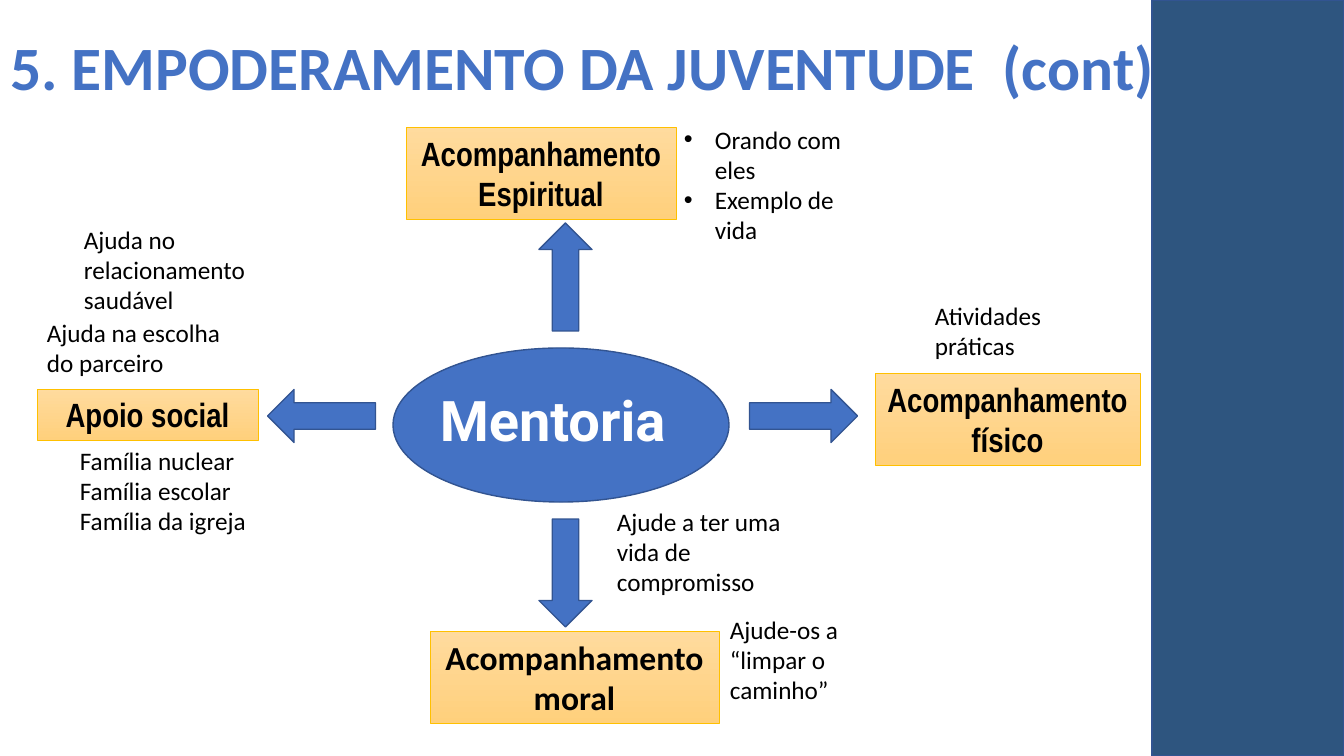
from lxml import etree
from pptx import Presentation
from pptx import util as u
from pptx.dml.color import RGBColor
from pptx.enum import shapes, text
from pptx.oxml.ns import qn

PX = 914400 / 100.8
COLORS = {
    "blue": "4472C4", "outline": "325491", "bar": "2E557F", "white": "FFFFFF",
    "black": "000000", "gold": "FFC000", "light": "FFDB9E", "deep": "FFD07C",
}
RGB = {name: RGBColor.from_string(value) for name, value in COLORS.items()}


def write(frame, lines, size, font, color="black", bold=False, align=None):
    for i, line in enumerate(lines):
        paragraph = frame.paragraphs[0] if i == 0 else frame.add_paragraph()
        paragraph.alignment = align
        run = paragraph.add_run()
        run.text = line
        run.font.size = u.Pt(size)
        run.font.name = font
        run.font.bold = bold
        run.font.color.rgb = RGB[color]


def draw(kind, box, fill="blue", line="outline", width=1):
    shape = slide.shapes.add_shape(kind, *[round(v * PX) for v in box])
    shape.shadow.inherit = False
    if fill == "gradient":
        shape.fill.gradient()
        shape.fill.gradient_angle = 270
        for stop, tone in zip(shape.fill.gradient_stops, ("light", "deep")):
            stop.color.rgb = RGB[tone]
    else:
        shape.fill.solid()
        shape.fill.fore_color.rgb = RGB[fill]
    shape.line.color.rgb = RGB[line]
    shape.line.width = u.Pt(width)
    return shape


deck = Presentation()
deck.slide_width = round(1344 * PX)
deck.slide_height = round(756 * PX)
slide = deck.slides.add_slide(deck.slide_layouts[5])

title = slide.shapes.title
title.left, title.top, title.width, title.height = [round(v * PX) for v in (0, 26, 1177, 90)]
title.text_frame.vertical_anchor = text.MSO_ANCHOR.MIDDLE
write(title.text_frame, ["5. EMPODERAMENTO DA JUVENTUDE  (cont)"], 44, "Calibri",
      "blue", True, text.PP_ALIGN.LEFT)
title.text_frame.paragraphs[0].line_spacing = 0.9

side_bar = draw(shapes.MSO_SHAPE.RECTANGLE, (1152, 0, 192, 756), "bar")
slide.shapes._spTree.remove(side_bar._element)
slide.shapes._spTree.insert(2, side_bar._element)

draw(shapes.MSO_SHAPE.OVAL, (393, 348, 336, 154))
mentoring = slide.shapes.add_textbox(*[round(v * PX) for v in (430, 381, 260, 78)])
mentoring.text_frame.word_wrap = False
write(mentoring.text_frame, ["Mentoria"], 40, "Roboto", "white", True, text.PP_ALIGN.LEFT)

for left, top, angle in [(539, 223, 0), (777, 362, 90), (539, 519, 180), (295, 362, 270)]:
    arrow = draw(shapes.MSO_SHAPE.UP_ARROW, (left, top, 53, 108))
    arrow.rotation = angle

supports = [
    ("Acompanhamento Espiritual", "Arial Narrow", (406, 127, 270, 92)),
    ("Acompanhamento físico", "Arial Narrow", (875, 373, 265, 92)),
    ("Apoio social", "Arial Narrow", (37, 389, 221, 51)),
    ("Acompanhamento moral", "Calibri", (430, 631, 289, 92)),
]
for label, font, box in supports:
    support = draw(shapes.MSO_SHAPE.RECTANGLE, box, "gradient", "gold", 0.5)
    support.text_frame.word_wrap = True
    write(support.text_frame, [label], 24, font, "black", True, text.PP_ALIGN.CENTER)

examples = [
    (["Orando com eles", "Exemplo de vida"], (674, 119, 185, 163), True),
    (["Atividades práticas"], (925, 295, 155, 72), False),
    (["Ajude-os a “limpar o caminho”"], (720, 609, 187, 102), False),
    (["Ajude a ter uma vida de compromisso"], (607, 501, 187, 102), False),
    (["Ajuda no relacionamento saudável"], (74, 219, 187, 102), False),
    (["Ajuda na escolha do parceiro"], (37, 312, 221, 72), False),
    (["Família nuclear", "Família escolar", "Família da igreja"], (70, 440, 187, 102), False),
]
for lines, box, bulleted in examples:
    example = slide.shapes.add_textbox(*[round(v * PX) for v in box])
    example.text_frame.word_wrap = True
    write(example.text_frame, lines, 18, "Calibri")
    if bulleted:
        for paragraph in example.text_frame.paragraphs:
            properties = paragraph._p.get_or_add_pPr()
            properties.set("marL", str(round(31 * PX)))
            properties.set("indent", str(round(-31 * PX)))
            etree.SubElement(properties, qn("a:buFont")).set("typeface", "Arial")
            etree.SubElement(properties, qn("a:buChar")).set("char", "•")

deck.save("out.pptx")
